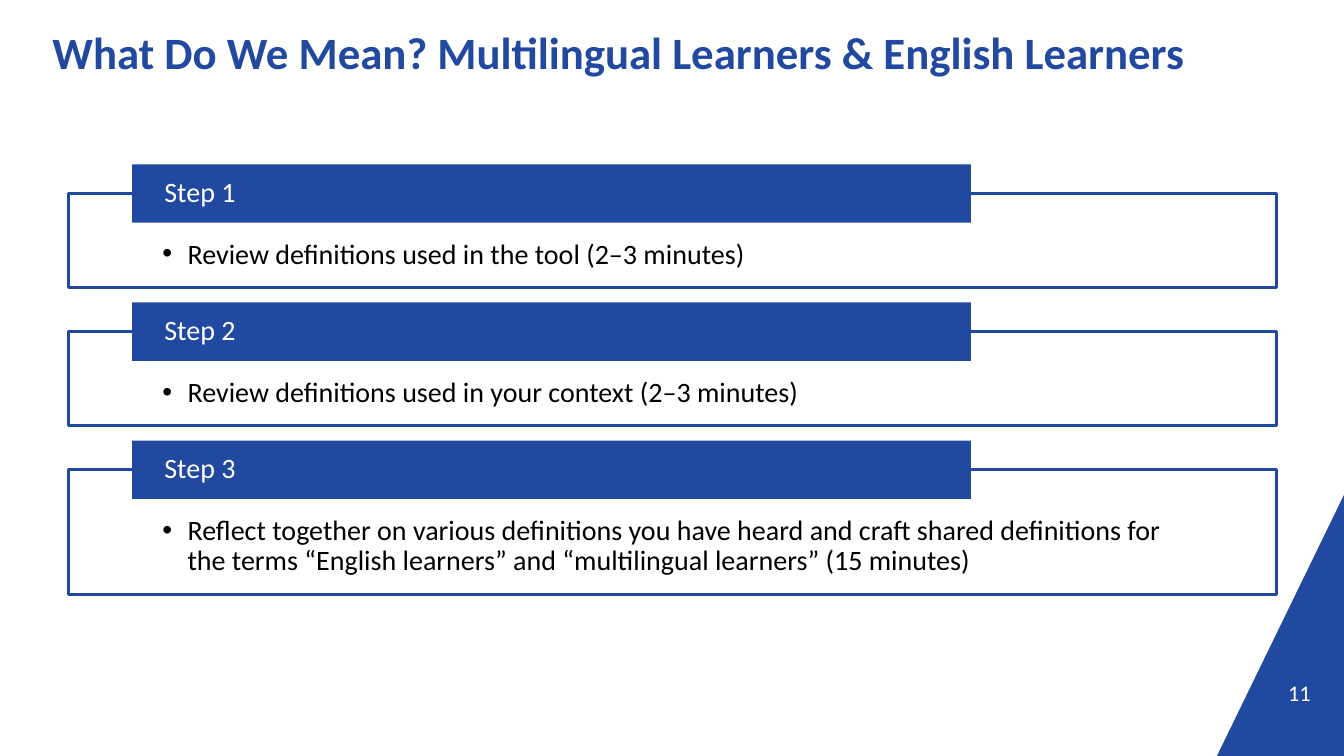
from dataclasses import dataclass

from lxml.etree import SubElement
from pptx import Presentation
from pptx.dml.color import RGBColor
from pptx.enum.shapes import MSO_SHAPE as Shape
from pptx.enum.text import MSO_ANCHOR as Anchor, PP_ALIGN as Align
from pptx.oxml.ns import qn
from pptx.util import Inches, Pt


@dataclass(frozen=True)
class Theme:
    font: str = "Calibri"
    blue: RGBColor = RGBColor(0x20, 0x49, 0x9F)
    white: RGBColor = RGBColor(0xFF, 0xFF, 0xFF)
    black: RGBColor = RGBColor(0, 0, 0)
    title_size: int = 32
    body_size: int = 20
    number_size: int = 16


THEME = Theme()

# Step text and frame height in inches
STEPS = [
    ("Review definitions used in the tool (2–3 minutes)", 0.93),
    ("Review definitions used in your context (2–3 minutes)", 0.93),
    ("Reflect together on various definitions you have heard and craft shared "
     "definitions for the terms “English learners” and “multilingual learners” "
     "(15 minutes)", 1.24),
]
FIRST_FRAME_TOP = 1.92
FRAME_GAP = 0.44
TAB_RISE = 0.29


def add_bullet(para):
    """Give a paragraph a black round bullet with a hanging indent."""
    props = para._p.get_or_add_pPr()
    props.set("marL", str(Inches(0.25)))
    props.set("indent", str(Inches(-0.25)))
    color = SubElement(props, qn("a:buClr"))
    SubElement(color, qn("a:srgbClr"), val=str(THEME.black))
    SubElement(props, qn("a:buFont"), typeface="Arial")
    SubElement(props, qn("a:buChar"), char="•")


def write_text(shape, text, *, size, color, bold=False, align=Align.LEFT,
               anchor=Anchor.MIDDLE, insets=(0, 0, 0, 0), spacing=None,
               bullet=False):
    frame = shape.text_frame
    frame.word_wrap = True
    frame.vertical_anchor = anchor
    (frame.margin_left, frame.margin_top,
     frame.margin_right, frame.margin_bottom) = map(Inches, insets)
    para = frame.paragraphs[0]
    if bullet:
        add_bullet(para)
    para.alignment = align
    if spacing:
        para.line_spacing = spacing
    span = para.add_run()
    span.text = text
    span.font.name = THEME.font
    span.font.size = Pt(size)
    span.font.bold = bold
    span.font.color.rgb = color


def add_label(page, text, left, top, width, height, **style):
    box = page.shapes.add_textbox(*map(Inches, (left, top, width, height)))
    write_text(box, text, **style)


def paint(shape, fill, line=None):
    shape.shadow.inherit = False
    shape.fill.solid()
    shape.fill.fore_color.rgb = fill
    if line is None:
        shape.line.fill.background()
    else:
        shape.line.color.rgb = line
        shape.line.width = Pt(2)


def add_panel(page, left, top, width, height, fill, line=None):
    panel = page.shapes.add_shape(
        Shape.RECTANGLE, *map(Inches, (left, top, width, height)))
    paint(panel, fill, line)
    return panel


def add_step(page, number, text, top, height):
    frame = add_panel(page, 0.68, top, 11.98, height, THEME.white, THEME.blue)
    write_text(frame, text, size=THEME.body_size, color=THEME.black,
               anchor=Anchor.TOP, insets=(0.93, 0.46, 0.93, 0.16),
               spacing=0.9, bullet=True)
    tab = add_panel(page, 1.31, top - TAB_RISE, 8.32, 2 * TAB_RISE, THEME.blue)
    write_text(tab, f"Step {number}", size=THEME.body_size, color=THEME.white,
               insets=(0.32, 0, 0.32, 0), spacing=0.9)


def add_corner(page):
    right, bottom = Inches(13.33), Inches(7.5)
    outline = page.shapes.build_freeform(right, Inches(4.91))
    outline.add_line_segments([(Inches(12.07), bottom), (right, bottom)])
    paint(outline.convert_to_shape(), THEME.blue)


def main():
    deck = Presentation()
    deck.slide_width, deck.slide_height = Inches(13.33), Inches(7.5)
    page = deck.slides.add_slide(deck.slide_layouts[6])

    # Corner wedge
    add_corner(page)

    # Steps, stacked with equal gaps
    top = FIRST_FRAME_TOP
    for number, (text, height) in enumerate(STEPS, start=1):
        add_step(page, number, text, top, height)
        top += height + FRAME_GAP

    # Title and page number
    add_label(page, "What Do We Mean? Multilingual Learners & English Learners",
              0.52, 0.24, 11.98, 0.54,
              size=THEME.title_size, color=THEME.blue, bold=True)
    add_label(page, "11", 12.01, 6.7, 0.99, 0.3, size=THEME.number_size,
              color=THEME.white, align=Align.RIGHT, anchor=Anchor.BOTTOM)

    deck.save("out.pptx")


if __name__ == "__main__":
    main()
